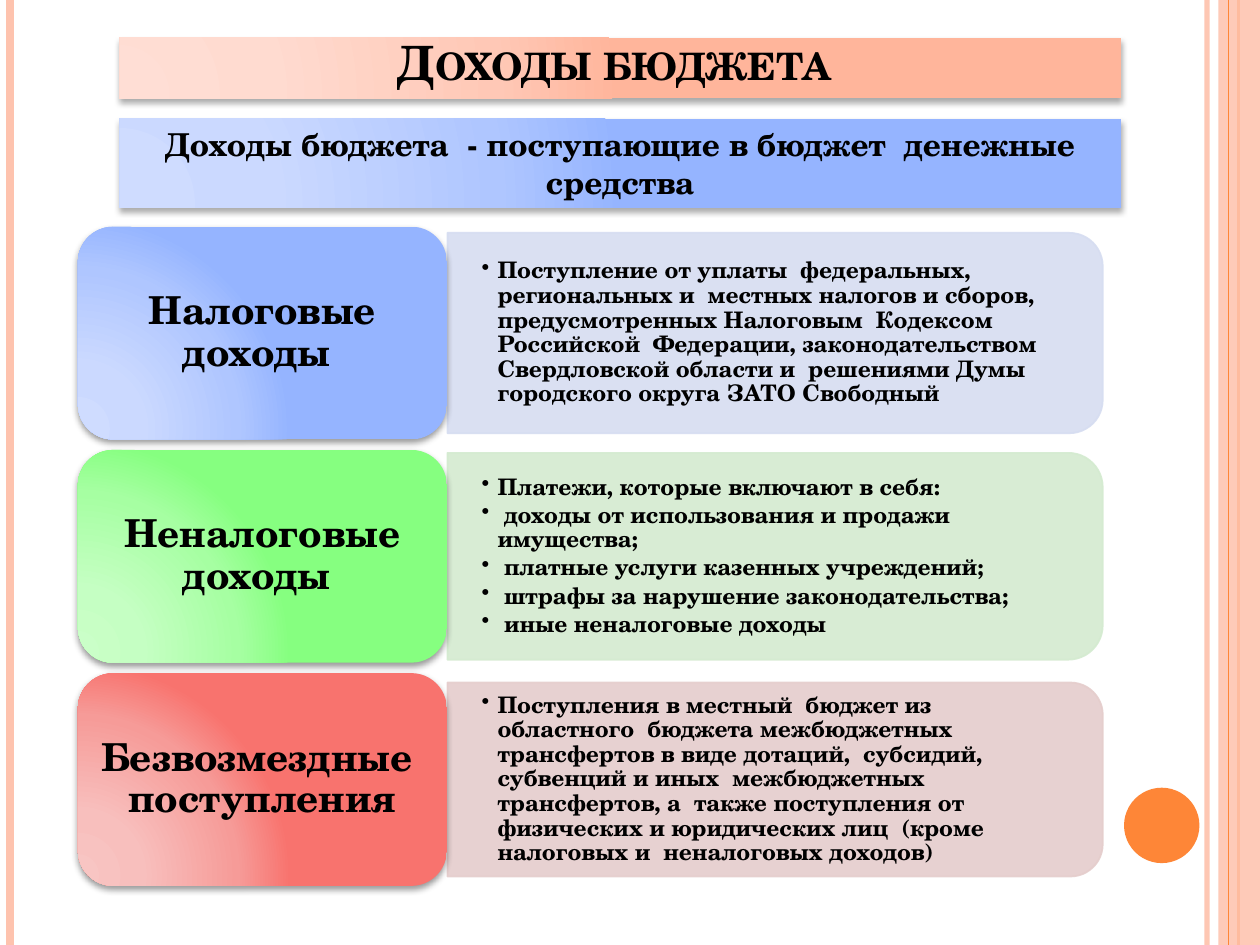
"""Build the slide on budget revenue with three income groups."""
from lxml.etree import SubElement
from pptx import Presentation
from pptx.dml.color import RGBColor
from pptx.enum.shapes import MSO_CONNECTOR, MSO_SHAPE
from pptx.enum.text import MSO_ANCHOR, PP_ALIGN
from pptx.oxml.ns import qn
from pptx.util import Cm, Pt

FONT = "TeX Gyre Schola"
BLACK = RGBColor(0x00, 0x00, 0x00)
PEACH = RGBColor(0xFE, 0xC3, 0xAE)
ORANGE = RGBColor(0xFE, 0x86, 0x37)
PALE_BLUE = RGBColor(0xD6, 0xDD, 0xF1)
PALE_GREEN = RGBColor(0xD4, 0xEB, 0xD0)
PALE_RED = RGBColor(0xE5, 0xCD, 0xCC)
CORAL = [RGBColor(0xFF, 0xDE, 0xD5), RGBColor(0xFF, 0xDB, 0xD0),
         RGBColor(0xFF, 0xC8, 0xB6), RGBColor(0xFF, 0xB5, 0x9B)]
BLUE = [RGBColor(0xCF, 0xDC, 0xFF), RGBColor(0xCB, 0xD9, 0xFF),
        RGBColor(0xAF, 0xC6, 0xFF), RGBColor(0x95, 0xB4, 0xFF)]
GREEN = [RGBColor(0xCA, 0xFF, 0xC8), RGBColor(0xC5, 0xFF, 0xC3),
         RGBColor(0xA6, 0xFF, 0xA2), RGBColor(0x86, 0xFF, 0x80)]
RED = [RGBColor(0xF8, 0xC5, 0xC3), RGBColor(0xF8, 0xBF, 0xBD),
       RGBColor(0xF6, 0x9B, 0x98), RGBColor(0xF8, 0x73, 0x6E)]


def glow(shape, tones, alpha, blur, dist):
    shape.line.fill.background()
    shape.fill.solid()
    props = shape._element.spPr
    solid = props.find(qn("a:solidFill"))
    grad = SubElement(props, qn("a:gradFill"), rotWithShape="1")
    props.replace(solid, grad)
    stops = SubElement(grad, qn("a:gsLst"))
    for pos, tone in zip((0, 30, 75, 100), tones):
        stop = SubElement(stops, qn("a:gs"), pos=str(pos * 1000))
        SubElement(stop, qn("a:srgbClr"), val=str(tone))
    ring = SubElement(grad, qn("a:path"), path="circle")
    SubElement(ring, qn("a:fillToRect"), l="5000", t="100000", r="120000", b="10000")
    shape.shadow.inherit = False
    shade = SubElement(props.find(qn("a:effectLst")), qn("a:outerShdw"),
                       blurRad=str(Pt(blur)), dist=str(Pt(dist)),
                       dir="5400000", algn="ctr", rotWithShape="0")
    color = SubElement(shade, qn("a:srgbClr"), val=str(BLACK))
    SubElement(color, qn("a:alpha"), val=str(alpha * 1000))


def write(shape, text, size, align, space, anchor):
    frame = shape.text_frame
    frame.text = text
    frame.word_wrap = True
    frame.vertical_anchor = anchor
    for para in frame.paragraphs:
        para.alignment = align
        para.line_spacing = space
        for run in para.runs:
            run.font.name = FONT
            run.font.size = Pt(size)
            run.font.bold = True
            run.font.color.rgb = BLACK
    return frame


deck = Presentation()
deck.slide_width, deck.slide_height = Cm(25.4), Cm(19.05)
slide = deck.slides.add_slide(deck.slide_layouts[6])
shapes = slide.shapes
faded = []

for left, color, width, alpha in [(24.33, PEACH, 3, 93), (0.2, PEACH, 4.5, 100),
                                  (24.97, ORANGE, 1.5, 100), (24.77, ORANGE, 0.75, 100)]:
    stripe = shapes.add_connector(MSO_CONNECTOR.STRAIGHT, Cm(left), 0, Cm(left), Cm(19.05))
    stripe.line.color.rgb = color
    stripe.line.width = Pt(width)
    SubElement(stripe._element.spPr, qn("a:effectLst"))
    if alpha < 100:
        faded.append((stripe, alpha))

band = shapes.add_shape(MSO_SHAPE.RECTANGLE, Cm(24.56), 0, Cm(0.84), Cm(19.05))
disc = shapes.add_shape(MSO_SHAPE.OVAL, Cm(22.66), Cm(15.88), Cm(1.52), Cm(1.52))
for shape, color in [(band, PEACH), (disc, ORANGE)]:
    shape.shadow.inherit = False
    shape.fill.solid()
    shape.fill.fore_color.rgb = color
    shape.line.fill.background()
faded.append((band, 87))
band._element.addnext(stripe._element)

for top, high, tones, text, size, space, caps in [
        (0.76, 1.22, CORAL, "Доходы бюджета ", 27, 0.8, True),
        (2.39, 1.8, BLUE, "Доходы бюджета  - поступающие в бюджет  денежные средства",
         18, 1.0, False)]:
    bar = shapes.add_shape(MSO_SHAPE.RECTANGLE, Cm(2.41), Cm(top), Cm(20.19), Cm(high))
    glow(bar, tones, 32, 3.5, 2.2)
    frame = write(bar, text, size, PP_ALIGN.CENTER, space, MSO_ANCHOR.TOP)
    if caps:
        frame.paragraphs[0].runs[0].font._element.set("cap", "small")

groups = [
    ("Налоговые доходы ", BLUE, PALE_BLUE, 4.04, [
        "Поступление от уплаты  федеральных, региональных и  местных налогов и сборов,  "
        "предусмотренных Налоговым  Кодексом Российской  Федерации, законодательством  "
        "Свердловской области и  решениями Думы  городского округа ЗАТО Свободный"]),
    ("Неналоговые доходы ", GREEN, PALE_GREEN, 4.17, [
        "Платежи, которые включают в себя:",
        " доходы от использования и продажи имущества;",
        " платные услуги казенных учреждений;",
        " штрафы за нарушение законодательства;",
        " иные неналоговые доходы"]),
    ("Безвозмездные  поступления", RED, PALE_RED, 3.91, [
        "Поступления в местный  бюджет из областного  бюджета межбюджетных  "
        "трансфертов в виде дотаций,  субсидий, субвенций и иных  межбюджетных "
        "трансфертов, а  также поступления от  физических и юридических лиц  "
        "(кроме налоговых и  неналоговых доходов)"]),
]
CARD, STEP, LONG, EDGE = 4.29, 4.5, 13.21, 9.02

for row, (name, tones, pale, high, items) in enumerate(groups):
    top = 4.57 + row * STEP
    mid = top + CARD / 2

    panel = shapes.add_shape(MSO_SHAPE.ROUND_2_SAME_RECTANGLE,
                             Cm(EDGE + (LONG - high) / 2), Cm(mid - LONG / 2),
                             Cm(high), Cm(LONG))
    panel.rotation = 90
    panel.shadow.inherit = False
    panel.fill.solid()
    panel.fill.fore_color.rgb = pale
    panel.line.color.rgb = pale
    panel.line.width = Pt(1)
    faded.append((panel, 90))

    body = shapes.add_textbox(Cm(EDGE), Cm(mid - high / 2 + 0.2), Cm(13), Cm(high - 0.4))
    frame = write(body, "\n".join(items), 13, PP_ALIGN.LEFT, 0.9, MSO_ANCHOR.MIDDLE)
    frame.margin_left = frame.margin_right = Cm(0.69)
    frame.margin_top = frame.margin_bottom = Cm(0.36)
    for para in frame.paragraphs:
        para.level = 1
        para.space_after = Pt(2)
        props = para._p.get_or_add_pPr()
        props.set("marL", str(Cm(0.32)))
        props.set("indent", str(-Cm(0.32)))
        SubElement(props, qn("a:buChar"), char="•")

    card = shapes.add_shape(MSO_SHAPE.ROUNDED_RECTANGLE, Cm(1.57), Cm(top), Cm(7.44), Cm(CARD))
    glow(card, tones, 40, 4, 2)
    write(card, name, 22, PP_ALIGN.CENTER, 0.9, MSO_ANCHOR.MIDDLE)

for shape, alpha in faded:
    for color in shape._element.spPr.iter(qn("a:srgbClr")):
        SubElement(color, qn("a:alpha"), val=str(alpha * 1000))

deck.save("out.pptx")
